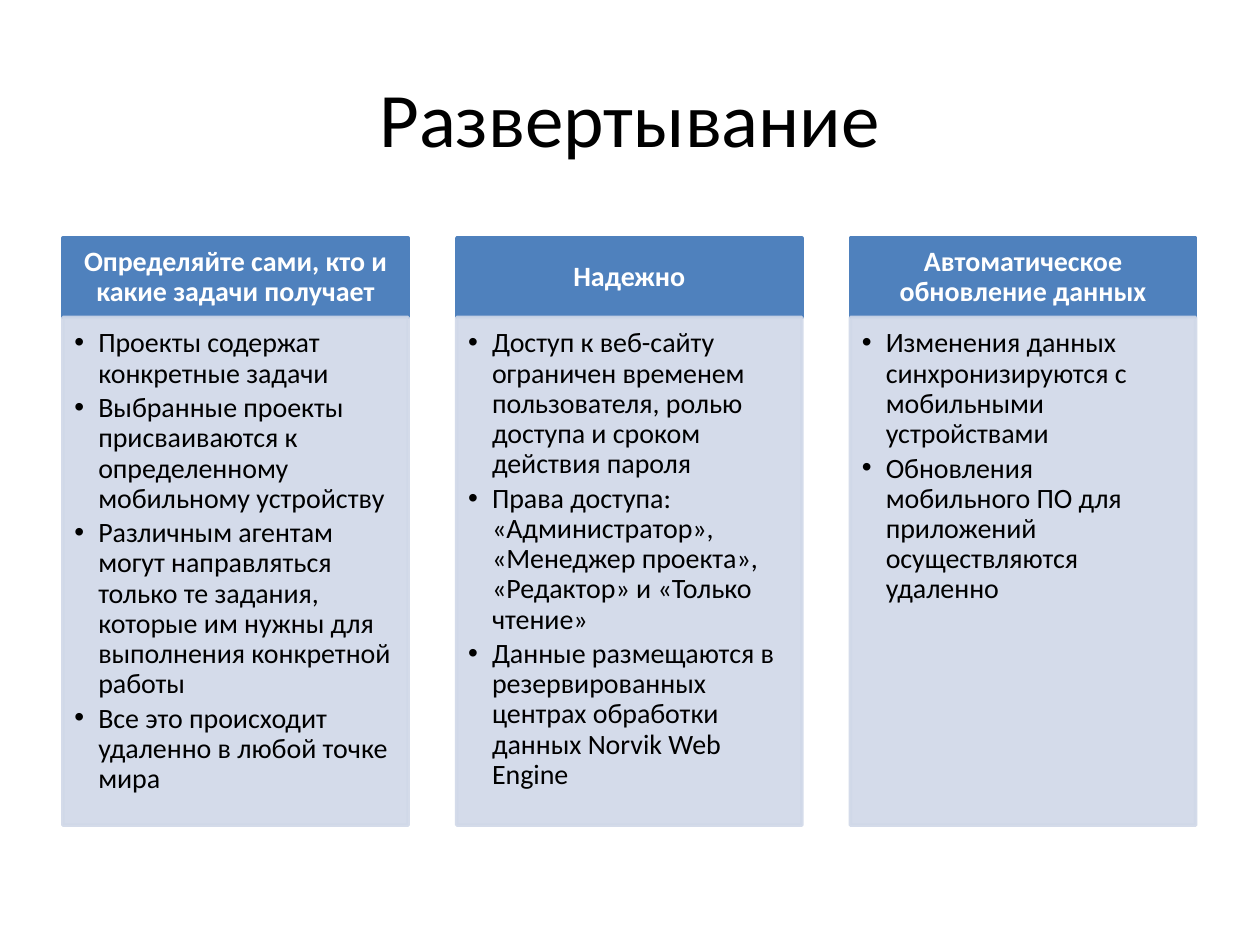
from lxml import etree
from pptx import Presentation, util as u
from pptx.dml.color import RGBColor
from pptx.enum import shapes, text
from pptx.oxml.ns import qn

BLUE, PALE, WHITE, BLACK = "4F81BD", "D0D8E8", "FFFFFF", "000000"
LEFT, WIDTH, PITCH = 0.5, 2.74, 3.125
HEADER_TOP, HEADER_HEIGHT, BODY_HEIGHT = 1.89, 0.63, 4.03
COLUMNS = [
    ("Определяйте сами, кто и какие задачи получает", [
        "Проекты содержат конкретные задачи",
        "Выбранные проекты присваиваются к определенному мобильному устройству",
        "Различным агентам могут направляться только те задания, которые им нужны "
        "для выполнения конкретной работы",
        "Все это происходит удаленно в любой точке мира",
    ]),
    ("Надежно", [
        "Доступ к веб-сайту ограничен временем пользователя, ролью доступа и сроком действия пароля",
        "Права доступа: «Администратор», «Менеджер проекта», «Редактор» и «Только чтение»",
        "Данные размещаются в резервированных центрах обработки данных Norvik Web Engine",
    ]),
    ("Автоматическое обновление данных", [
        "Изменения данных синхронизируются с мобильными устройствами",
        "Обновления мобильного ПО для приложений осуществляются удаленно",
    ]),
]


def color(value):
    """Turn a hex string into a colour."""
    return RGBColor.from_string(value)


def set_font(paragraph, size, value, bold=False):
    """Set the font of a whole paragraph."""
    font = paragraph.font
    font.name, font.size, font.bold = "Calibri", u.Pt(size), bold
    font.color.rgb = color(value)


def set_alpha(shape, percent):
    """Make the fill and the line of a shape partly transparent."""
    for element in shape._element.spPr.iter(qn("a:srgbClr")):
        etree.SubElement(element, qn("a:alpha"), val=str(percent * 1000))


def add_bullet(paragraph):
    """Give a paragraph a hanging bullet."""
    paragraph.level = 1
    properties = paragraph._p.get_or_add_pPr()
    indent = u.Inches(0.19)
    properties.set("marL", str(indent))
    properties.set("indent", str(-indent))
    etree.SubElement(properties, qn("a:buFont"), typeface="Arial")
    etree.SubElement(properties, qn("a:buChar"), char="•")


def add_box(slide, left, top, height, fill, insets, anchor):
    """Add a filled rectangle ready for text."""
    shape = slide.shapes.add_shape(
        shapes.MSO_SHAPE.RECTANGLE,
        u.Inches(left), u.Inches(top), u.Inches(WIDTH), u.Inches(height))
    shape.shadow.inherit = False
    shape.fill.solid()
    shape.fill.fore_color.rgb = color(fill)
    shape.line.color.rgb = color(fill)
    shape.line.width = u.Pt(2)
    frame = shape.text_frame
    frame.word_wrap = True
    frame.vertical_anchor = anchor
    frame.margin_left, frame.margin_top, frame.margin_right, frame.margin_bottom = map(u.Inches, insets)
    return shape


def add_header(slide, left, heading):
    """Add the blue heading of a column."""
    shape = add_box(slide, left, HEADER_TOP, HEADER_HEIGHT, BLUE,
                    (0.12, 0.07, 0.12, 0.07), text.MSO_ANCHOR.MIDDLE)
    paragraph = shape.text_frame.paragraphs[0]
    paragraph.text = heading
    paragraph.alignment = text.PP_ALIGN.CENTER
    paragraph.line_spacing = 0.9
    set_font(paragraph, 16, WHITE, bold=True)


def add_body(slide, left, items):
    """Add the pale bulleted body of a column."""
    shape = add_box(slide, left, HEADER_TOP + HEADER_HEIGHT, BODY_HEIGHT, PALE,
                    (0.09, 0.09, 0.12, 0.14), text.MSO_ANCHOR.TOP)
    set_alpha(shape, 90)
    frame = shape.text_frame
    frame.text = "\n".join(items)
    for paragraph in frame.paragraphs:
        paragraph.alignment = text.PP_ALIGN.LEFT
        paragraph.line_spacing = 0.9
        paragraph.space_after = u.Pt(2.4)
        add_bullet(paragraph)
        set_font(paragraph, 16, BLACK)


def set_title(slide, words):
    """Fill and place the title."""
    title = slide.shapes.title
    title.left, title.top, title.width, title.height = map(u.Inches, (0.5, 0.3, 9, 1.25))
    title.text_frame.vertical_anchor = text.MSO_ANCHOR.MIDDLE
    paragraph = title.text_frame.paragraphs[0]
    paragraph.text = words
    paragraph.alignment = text.PP_ALIGN.CENTER
    set_font(paragraph, 44, BLACK)


def main():
    """Build and save the slide."""
    presentation = Presentation()
    presentation.slide_width, presentation.slide_height = u.Inches(10), u.Inches(7.5)
    slide = presentation.slides.add_slide(presentation.slide_layouts[5])
    set_title(slide, "Развертывание")
    for index, (heading, items) in enumerate(COLUMNS):
        left = LEFT + index * PITCH
        add_header(slide, left, heading)
        add_body(slide, left, items)
    presentation.save("out.pptx")


if __name__ == "__main__":
    main()
